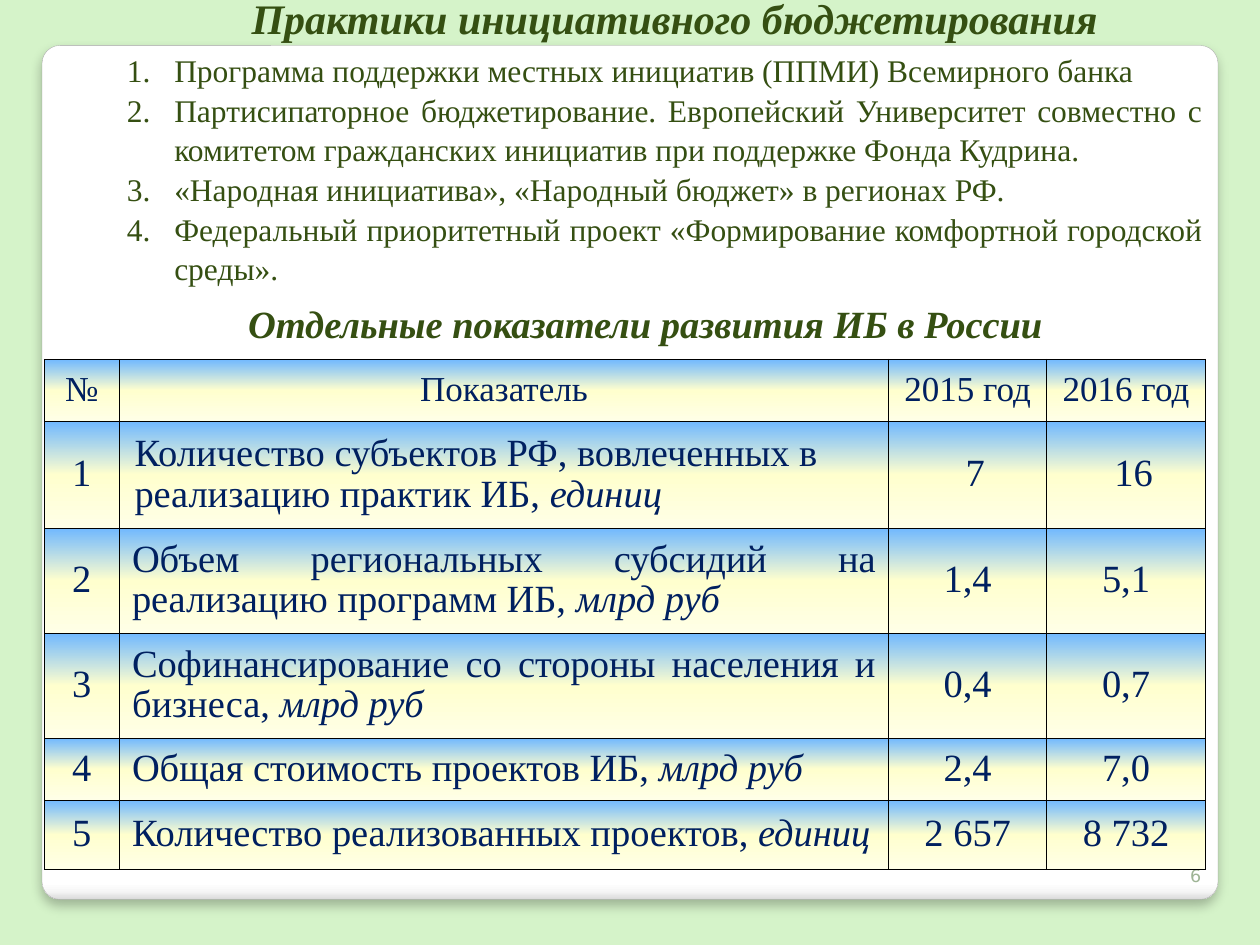
from lxml import etree
from pptx import Presentation
from pptx.dml.color import RGBColor
from pptx.enum.shapes import MSO_SHAPE
from pptx.enum.text import MSO_ANCHOR, PP_ALIGN
from pptx.oxml import parse_xml
from pptx.oxml.ns import nsdecls, qn
from pptx.util import Pt

LEFT, CENTER, RIGHT, JUSTIFY = PP_ALIGN.LEFT, PP_ALIGN.CENTER, PP_ALIGN.RIGHT, PP_ALIGN.JUSTIFY
TOP, MIDDLE, BOTTOM = MSO_ANCHOR.TOP, MSO_ANCHOR.MIDDLE, MSO_ANCHOR.BOTTOM
SERIF = "Times New Roman"
COLORS = {
    "background": "D5F3C9", "heading": "354F12", "table text": "002060",
    "page number": "9EB495", "panel line": "A4A4A4", "border": "000000",
}
PANEL_STOPS = [(0, "FFFFFF"), (98, "FFFFFF"), (99, "F7F7F7"), (100, "DADADA")]
CELL_STOPS = [(0, "70B8FF"), (50, "FFFFCE"), (100, "FFFFE7")]


def fill_downwards(fill, properties, stops):
    """Give the fill a top-to-bottom gradient; properties is its parent element."""
    fill.gradient()
    fill.gradient_angle = 270
    stop_list = properties.find(qn("a:gradFill")).find(qn("a:gsLst"))
    for old_stop in list(stop_list):
        stop_list.remove(old_stop)
    for position, color in stops:
        stop = etree.SubElement(stop_list, qn("a:gs"), pos=str(position * 1000))
        etree.SubElement(stop, qn("a:srgbClr"), val=color)


def format_runs(paragraph, size, color, alignment, name=SERIF):
    paragraph.alignment = alignment
    for run in paragraph.runs:
        run.font.name = name
        run.font.size = Pt(size)
        run.font.color.rgb = RGBColor.from_string(COLORS[color])


presentation = Presentation()
presentation.slide_width, presentation.slide_height = Pt(720), Pt(540)
slide = presentation.slides.add_slide(presentation.slide_layouts[6])
slide.background.fill.solid()
slide.background.fill.fore_color.rgb = RGBColor.from_string(COLORS["background"])

# White panel with a soft shadow
panel = slide.shapes.add_shape(MSO_SHAPE.ROUNDED_RECTANGLE, Pt(24), Pt(26), Pt(672), Pt(488))
panel.adjustments[0] = 0.021
panel.shadow.inherit = False
panel_properties = panel._element.spPr
fill_downwards(panel.fill, panel_properties, PANEL_STOPS)
panel.line.color.rgb = RGBColor.from_string(COLORS["panel line"])
panel.line.width = Pt(0.16)
panel_properties.find(qn("a:effectLst")).append(parse_xml(
    f'<a:outerShdw {nsdecls("a")} blurRad="{Pt(6)}" dist="{Pt(4)}" dir="5400000" '
    'algn="t" rotWithShape="0"><a:srgbClr val="000000"><a:alpha val="25000"/>'
    '</a:srgbClr></a:outerShdw>'))

# Page number, headings and the numbered list
practices = [
    "Программа поддержки местных инициатив (ППМИ) Всемирного банка",
    "Партисипаторное бюджетирование. Европейский Университет совместно с "
    "комитетом гражданских инициатив при поддержке Фонда Кудрина.",
    "«Народная инициатива», «Народный бюджет» в регионах РФ.",
    "Федеральный приоритетный проект «Формирование комфортной городской среды».",
]
text_boxes = [
    # lines, (left, top, width, height), size, color, alignment, anchor, font
    (["6"], (657.5, 481, 36, 28.75), 10, "page number", RIGHT, BOTTOM, "DejaVu Sans"),
    (["Практики инициативного бюджетирования"], (76.5, -8, 618, 36),
     24, "heading", CENTER, TOP, SERIF),
    (practices, (65.5, 24.5, 629, 138), 18, "heading", JUSTIFY, TOP, SERIF),
    (["Отдельные показатели развития ИБ в России"], (59.75, 167.75, 618, 34),
     22, "heading", CENTER, TOP, SERIF),
]
for lines, place, size, color, alignment, anchor, font_name in text_boxes:
    text_frame = slide.shapes.add_textbox(*map(Pt, place)).text_frame
    text_frame.word_wrap = True
    text_frame.vertical_anchor = anchor
    text_frame.text = "\n".join(lines)
    for paragraph in text_frame.paragraphs:
        format_runs(paragraph, size, color, alignment, font_name)
        if lines is practices:
            paragraph.line_spacing = 1.05
            properties = paragraph._p.get_or_add_pPr()
            properties.set("marL", str(Pt(27)))
            properties.set("indent", str(-Pt(27)))
            etree.SubElement(properties, qn("a:buAutoNum"), type="arabicPeriod")
        elif alignment == CENTER:
            paragraph.runs[0].font.bold = paragraph.runs[0].font.italic = True

# Table: an indicator is its wording and its unit, the unit in italics
header = ("№", ("Показатель", ""), "2015 год", "2016 год")
indicators = [
    (("Количество субъектов РФ, вовлеченных в реализацию практик ИБ, ", "единиц"), "7", "16"),
    (("Объем региональных субсидий на реализацию программ ИБ, ", "млрд руб"), "1,4", "5,1"),
    (("Софинансирование со стороны населения и бизнеса, ", "млрд руб"), "0,4", "0,7"),
    (("Общая стоимость проектов ИБ, ", "млрд руб"), "2,4", "7,0"),
    (("Количество реализованных проектов, ", "единиц"), "2 657", "8 732"),
]
rows = [header] + [(str(number), *row) for number, row in enumerate(indicators, 1)]
column_widths = [43, 439.5, 90.5, 90.5]
row_heights = [35.5, 61, 60, 60, 35.5, 39.5]
table = slide.shapes.add_table(
    len(rows), len(header), Pt(25.25), Pt(205.25),
    Pt(sum(column_widths)), Pt(sum(row_heights))).table
table.first_row = table.horz_banding = False
for column, width in zip(table.columns, column_widths):
    column.width = Pt(width)
for row, height in zip(table.rows, row_heights):
    row.height = Pt(height)

for row_index, row in enumerate(rows):
    for column_index, content in enumerate(row):
        cell = table.cell(row_index, column_index)
        cell.vertical_anchor = MIDDLE
        paragraph = cell.text_frame.paragraphs[0]
        alignment = CENTER
        if column_index == 1:
            wording, unit = content
            paragraph.add_run().text = wording
            if unit:
                unit_run = paragraph.add_run()
                unit_run.text = unit
                unit_run.font.italic = True
                alignment = LEFT if row_index == 1 else JUSTIFY
        else:
            paragraph.text = content
        format_runs(paragraph, 22 if row_index else 20, "table text", alignment)
        paragraph.line_spacing = 0.95
        if row_index == 1 and column_index:
            cell.margin_left = cell.margin_right = cell.margin_top = cell.margin_bottom = 0
            paragraph._p.get_or_add_pPr().set("marL", str(Pt(8.64)))

        cell_properties = cell._tc.get_or_add_tcPr()
        fill_downwards(cell.fill, cell_properties, CELL_STOPS)
        for position, side in enumerate(("lnL", "lnR", "lnT", "lnB")):
            cell_properties.insert(position, parse_xml(
                f'<a:{side} {nsdecls("a")} w="{Pt(0.5)}"><a:solidFill>'
                f'<a:srgbClr val="{COLORS["border"]}"/></a:solidFill></a:{side}>'))

presentation.save("out.pptx")
